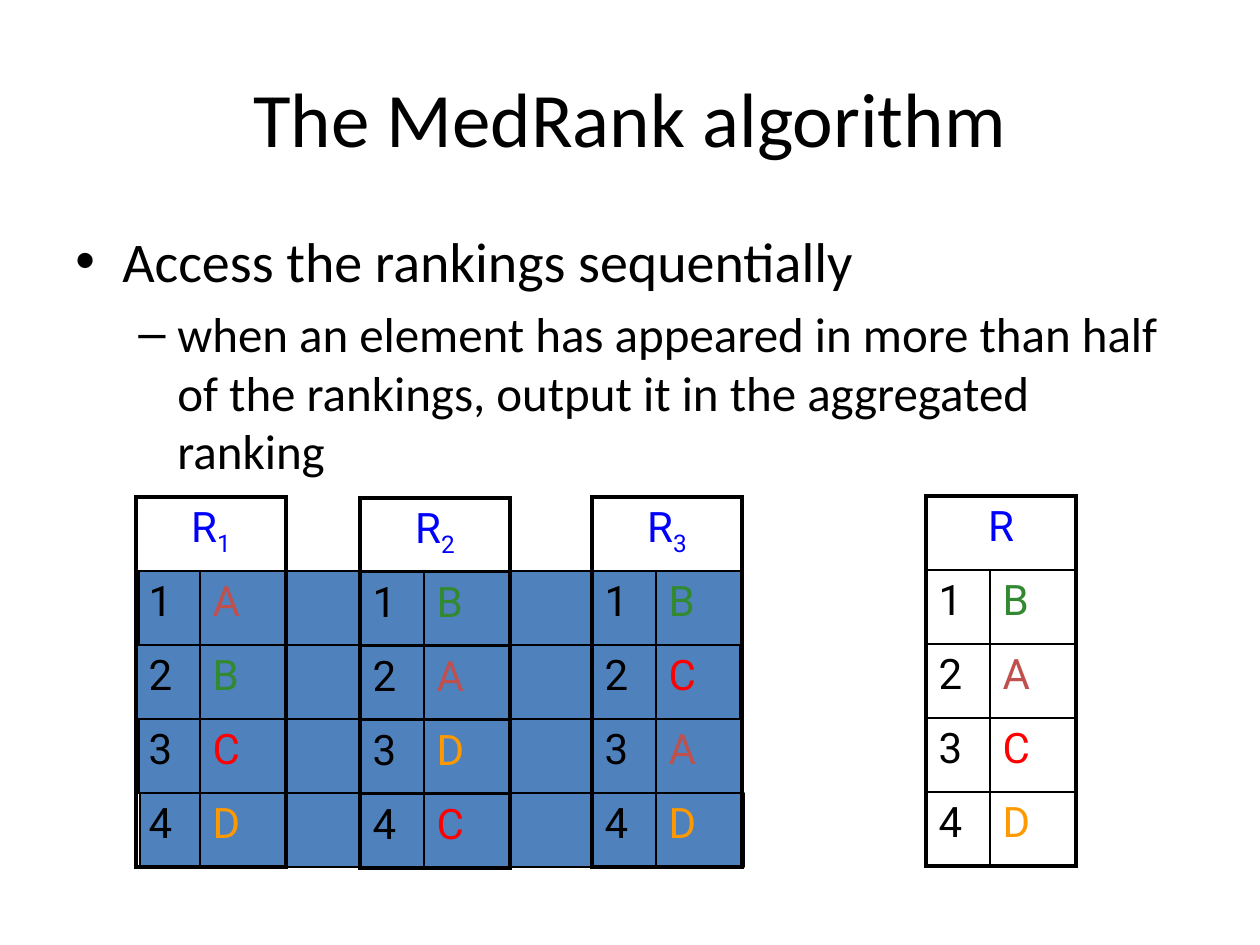
from lxml import etree
from pptx import Presentation
from pptx import util as u
from pptx.dml.color import RGBColor
from pptx.enum import shapes, text
from pptx.oxml.ns import qn

PX = 914400 / 126
HUES = {"ink": "000000", "band": "4F81BD", "head": "0000FF",
        "A": "C0504D", "B": "338931", "C": "FF0000", "D": "FF9900"}
THIN, THICK = 1, 2.25


def px(n):
    return u.Emu(round(n * PX))


def rgb(hue):
    return RGBColor.from_string(HUES[hue])


def sub(node, tag, **attrs):
    return etree.SubElement(node, qn(tag), attrs)


def add_run(para, words, size, font, hue):
    run = para.add_run()
    run.text = words
    run.font.size = u.Pt(size)
    run.font.name = font
    run.font.color.rgb = rgb(hue)
    return run


def lead(para):
    """Set the space before a paragraph to a fifth of a line."""
    props = para._p.get_or_add_pPr()
    sub(sub(props, "a:spcBef"), "a:spcPct", val="20000")
    return props


def add_title(slide, box, words):
    title = slide.shapes.title
    title.left, title.top, title.width, title.height = map(px, box)
    frame = title.text_frame
    frame.vertical_anchor = text.MSO_ANCHOR.MIDDLE
    para = frame.paragraphs[0]
    para.alignment = text.PP_ALIGN.CENTER
    add_run(para, words, 44, "Calibri", "ink")


def add_points(slide, box, points):
    """Each point is level, bullet, size, left margin, hanging indent, words."""
    frame = slide.shapes.add_textbox(*map(px, box)).text_frame
    frame.word_wrap = True
    for i, (level, mark, size, margin, hang, words) in enumerate(points):
        para = frame.add_paragraph() if i else frame.paragraphs[0]
        para.level = level
        props = lead(para)
        props.set("marL", str(px(margin)))
        props.set("indent", str(-px(hang)))
        sub(props, "a:buFont", typeface="Arial")
        sub(props, "a:buChar", char=mark)
        add_run(para, words, size, "Calibri", "ink")


def add_bands(slide, box, lefts):
    """Stack one band per left offset, the lowest at the back."""
    x, y, wide, high = box
    for row, left in reversed(list(enumerate(lefts))):
        band = slide.shapes.add_shape(
            shapes.MSO_SHAPE.RECTANGLE,
            *map(px, (x + left, y + row * high, wide, high)))
        band.shadow.inherit = False
        band.fill.solid()
        band.fill.fore_color.rgb = rgb("band")
        band.line.color.rgb = rgb("ink")
        band.line.width = u.Pt(0.75)


def edge(cell, widths):
    """Draw the left, right, top and bottom borders of a clear cell."""
    cell.fill.background()
    props = cell._tc.get_or_add_tcPr()
    for i, (side, width) in enumerate(zip("LRTB", widths)):
        line = etree.Element(qn("a:ln" + side), w=str(u.Pt(width)))
        sub(sub(line, "a:solidFill"), "a:srgbClr", val=HUES["ink"])
        props.insert(i, line)


def add_rank(slide, spot, index, items):
    """Place a ranking table with its top left corner at spot."""
    cols, high, count = (64, 86), 74, len(items) + 1
    box = (*spot, sum(cols), high * count)
    table = slide.shapes.add_table(count, 2, *map(px, box)).table
    table.first_row = table.horz_banding = False
    for col, wide in zip(table.columns, cols):
        col.width = px(wide)
    for row in table.rows:
        row.height = px(high)
    table.cell(0, 0).merge(table.cell(0, 1))

    for c in range(2):
        edge(table.cell(0, c), (THICK, THICK, THICK, THIN))
    para = table.cell(0, 0).text_frame.paragraphs[0]
    para.alignment = text.PP_ALIGN.CENTER
    lead(para)
    add_run(para, "R", 24, "Roboto", "head")
    if index:
        low = add_run(para, index, 24, "Roboto", "head")
        low.font._element.set("baseline", "-25000")

    for r, item in enumerate(items, 1):
        base = THICK if r == len(items) else THIN
        for c, (words, hue) in enumerate(((str(r), "ink"), (item, item))):
            cell = table.cell(r, c)
            sides = (THIN, THICK) if c else (THICK, THIN)
            edge(cell, (*sides, THIN, base))
            para = cell.text_frame.paragraphs[0]
            lead(para)
            add_run(para, words, 24, "Roboto", hue)


def main():
    deck = Presentation()
    deck.slide_width, deck.slide_height = px(1260), px(945)
    slide = deck.slides.add_slide(deck.slide_layouts[5])
    add_bands(slide, (136, 571, 604, 74), (3, 0, 3, 4))
    add_title(slide, (63, 38, 1134, 157), "The MedRank algorithm")
    add_points(slide, (63, 220, 1134, 624), (
        (0, "•", 32, 47, 47, "Access the rankings sequentially"),
        (1, "–", 28, 102, 39,
         "when an element has appeared in more than half of the rankings, "
         "output it in the aggregated ranking")))
    for spot, index, items in (((136, 497), "1", "ABCD"),
                               ((360, 498), "2", "BADC"),
                               ((592, 497), "3", "BCAD"),
                               ((926, 496), "", "BACD")):
        add_rank(slide, spot, index, items)
    deck.save("out.pptx")


if __name__ == "__main__":
    main()
